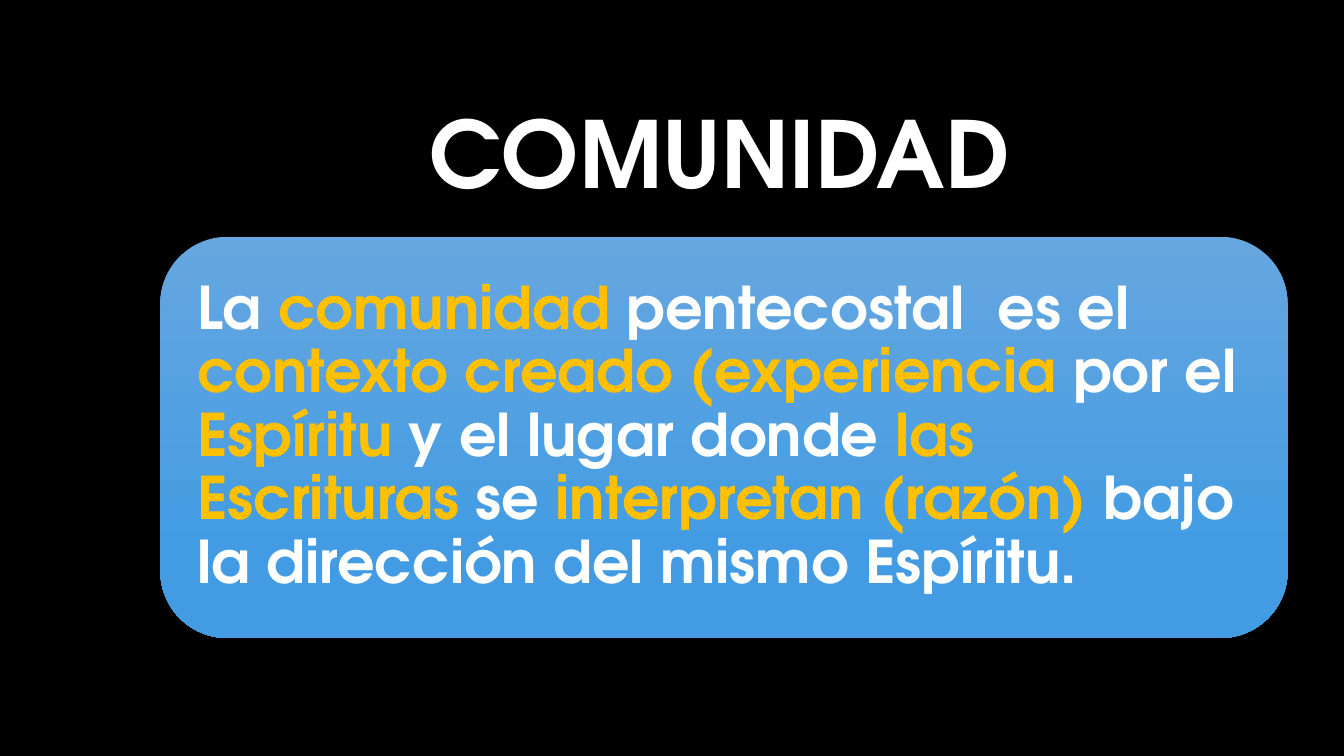
from pptx import Presentation
from pptx.dml.color import RGBColor
from pptx.enum.shapes import MSO_SHAPE as Shape
from pptx.enum.text import MSO_ANCHOR as Anchor, MSO_AUTO_SIZE as AutoSize, PP_ALIGN as Align
from pptx.util import Inches, Pt

WIDTH, HEIGHT = Inches(13.33), Inches(7.5)
FACE = "TeX Gyre Adventor"
WHITE, GOLD, BLACK = "FFFFFF", "FFC000", "000000"
CARD_STOPS = [(0, "66A7E0"), (0.78, "439CE3")]
HEADING_BOX = (0.28, 0.128, 0.511, 0.164)
CARD_BOX = (0.1193, 0.3133, 0.8387, 0.5307)
STATEMENT = [
    ("La ", WHITE),
    ("comunidad", GOLD),
    (" pentecostal  es el ", WHITE),
    ("contexto creado (experiencia ", GOLD),
    ("por el ", WHITE),
    ("Espíritu", GOLD),
    (" y el lugar donde ", WHITE),
    ("las Escrituras ", GOLD),
    ("se ", WHITE),
    ("interpretan (razón) ", GOLD),
    ("bajo la dirección del mismo Espíritu.", WHITE),
]


def color(value):
    """Turn a hex string into a colour."""
    return RGBColor.from_string(value)


def assign(target, values):
    """Set each attribute named in a dict of format values."""
    for name, value in values.items():
        setattr(target, name, value)


def place(box):
    """Turn shares of the slide's size into a position and size."""
    left, top, width, height = box
    return {"left": round(left * WIDTH), "top": round(top * HEIGHT),
            "width": round(width * WIDTH), "height": round(height * HEIGHT)}


def write(frame, phrases, size, align, inset):
    """Write coloured phrases as one paragraph centred in the frame's height."""
    assign(frame, {"word_wrap": True, "auto_size": AutoSize.NONE,
                   "vertical_anchor": Anchor.MIDDLE,
                   "margin_left": inset, "margin_right": inset,
                   "margin_top": inset, "margin_bottom": inset})
    paragraph = frame.paragraphs[0]
    assign(paragraph, {"alignment": align, "line_spacing": 0.9})
    for words, shade in phrases:
        phrase = paragraph.add_run()
        phrase.text = words
        assign(phrase.font, {"name": FACE, "size": Pt(size), "bold": True})
        phrase.font.color.rgb = color(shade)


def add_heading(slide, box):
    """Place the title in its box."""
    heading = slide.shapes.title
    assign(heading, place(box))
    write(heading.text_frame, [("COMUNIDAD", WHITE)], 66, Align.CENTER, Inches(0.1))


def add_statement(slide, box):
    """Place the rounded card with the statement in its box."""
    card = slide.shapes.add_shape(Shape.ROUNDED_RECTANGLE, **place(box))
    card.shadow.inherit = False
    card.line.fill.background()
    card.fill.gradient()
    card.fill.gradient_angle = 270
    for stop, (position, shade) in zip(card.fill.gradient_stops, CARD_STOPS):
        stop.position = position
        stop.color.rgb = color(shade)
    write(card.text_frame, STATEMENT, 42, Align.LEFT, Inches(0.17))


def main():
    """Build and save the slide."""
    deck = Presentation()
    assign(deck, {"slide_width": WIDTH, "slide_height": HEIGHT})
    slide = deck.slides.add_slide(deck.slide_layouts.get_by_name("Title Only"))
    slide.background.fill.solid()
    slide.background.fill.fore_color.rgb = color(BLACK)
    add_heading(slide, HEADING_BOX)
    add_statement(slide, CARD_BOX)
    deck.save("out.pptx")


if __name__ == "__main__":
    main()
